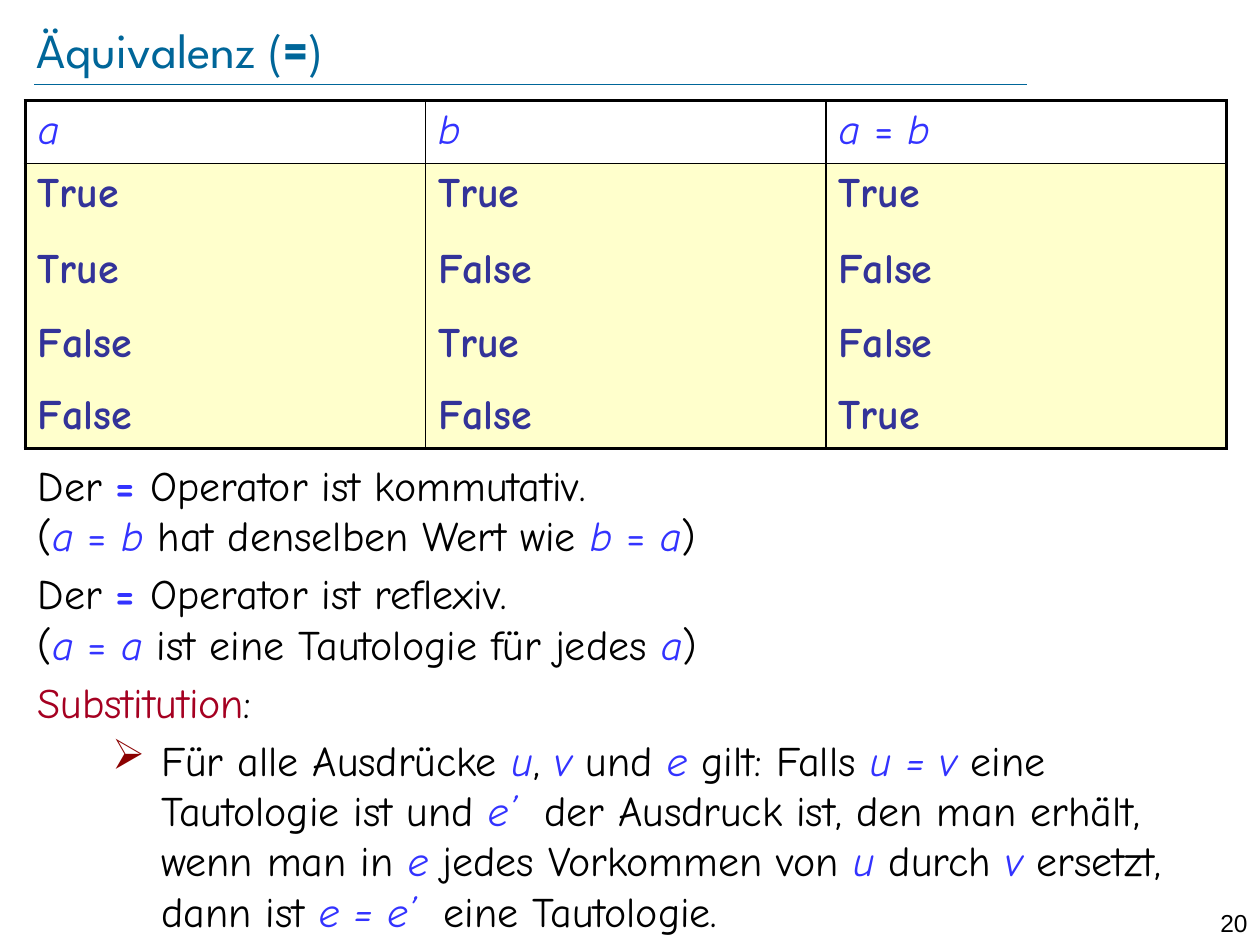
from lxml import etree
from pptx import Presentation
from pptx.dml.color import RGBColor
from pptx.enum.shapes import MSO_CONNECTOR
from pptx.enum.text import MSO_ANCHOR, PP_ALIGN
from pptx.oxml.ns import qn
from pptx.util import Cm, Pt

STRAIGHT = MSO_CONNECTOR.STRAIGHT
MIDDLE = MSO_ANCHOR.MIDDLE
RIGHT = PP_ALIGN.RIGHT

BLACK = RGBColor(0x00, 0x00, 0x00)
TEAL = RGBColor(0x00, 0x66, 0x99)
BLUE = RGBColor(0x33, 0x33, 0xFF)
NAVY = RGBColor(0x33, 0x33, 0x99)
RED = RGBColor(0xA5, 0x00, 0x21)
DARK_RED = RGBColor(0x8B, 0x00, 0x00)
YELLOW = RGBColor(0xFF, 0xFF, 0xCC)

TITLE_FONT, BODY_FONT, NUMBER_FONT = "League Spartan", "Comic Neue", "Arial"

# Run styles: colour, bold, italic
PLAIN = (BLACK, False, False)
VAR = (BLUE, False, True)
SIGN = (BLUE, False, False)
OPERATOR = (BLUE, True, False)
VALUE = (NAVY, True, False)
TERM = (RED, False, False)
HEADING = (TEAL, False, False)
HEADING_BOLD = (TEAL, True, False)


def add_runs(p, runs, font=BODY_FONT, size=24):
    """Add (text, style) pairs to a paragraph; a text of "\\n" is a line break."""
    for text, (color, bold, italic) in runs:
        if text == "\n":
            p.add_line_break()
            continue
        r = p.add_run()
        r.text = text
        r.font.name, r.font.size = font, Pt(size)
        r.font.bold, r.font.italic = bold, italic
        r.font.color.rgb = color


def add_border(cell, side, width):
    """Draw one cell side (L, R, T or B); a width of 0 leaves it open."""
    ln = etree.SubElement(cell._tc.get_or_add_tcPr(), qn("a:ln" + side), w=str(Pt(width)))
    if width:
        fill = etree.SubElement(ln, qn("a:solidFill"))
        etree.SubElement(fill, qn("a:srgbClr"), val=str(BLACK))
    else:
        etree.SubElement(ln, qn("a:noFill"))


prs = Presentation()
prs.slide_width, prs.slide_height = Cm(25.4), Cm(19.05)
s = prs.slides.add_slide(prs.slide_layouts[6])

# Title and rule
rule = s.shapes.add_connector(STRAIGHT, Cm(0.69), Cm(1.7), Cm(20.7), Cm(1.7))
rule.line.color.rgb = TEAL
rule.line.width = Pt(0.25)
etree.SubElement(rule._element.spPr, qn("a:effectLst"))

tf = s.shapes.add_textbox(Cm(0.74), Cm(0.33), Cm(22.76), Cm(1.3)).text_frame
tf.word_wrap = True
tf.vertical_anchor = MIDDLE
tf.margin_left = tf.margin_right = tf.margin_top = tf.margin_bottom = 0
add_runs(tf.paragraphs[0],
         [("Äquivalenz (", HEADING), ("=", HEADING_BOLD), (")", HEADING)],
         TITLE_FONT, 28)

# Truth table
header = [[("a", VAR)], [("b", VAR)], [("a ", VAR), ("=", SIGN), (" b", VAR)]]
truth = [[a, b, a == b] for a in (True, False) for b in (True, False)]
rows = [header] + [[[(str(v), VALUE)] for v in row] for row in truth]
row_heights = [1.17, 1.52, 1.5, 1.45, 1.22]
last_row, last_col = len(rows) - 1, len(header) - 1

table = s.shapes.add_table(len(rows), len(header), Cm(0.51), Cm(2.03),
                           Cm(24.21), Cm(sum(row_heights))).table
table.first_row = table.horz_banding = False
for col in table.columns:
    col.width = Cm(8.07)
for i, (row, height) in enumerate(zip(rows, row_heights)):
    table.rows[i].height = Cm(height)
    for j, runs in enumerate(row):
        cell = table.cell(i, j)
        add_runs(cell.text_frame.paragraphs[0], runs)
        add_border(cell, "L", 2.25 if j == 0 else 1)
        add_border(cell, "R", 2.25 if j == last_col else 1)
        add_border(cell, "T", {0: 2.25, 1: 1}.get(i, 0))
        add_border(cell, "B", {0: 1, last_row: 2.25}.get(i, 0))
        if i == 0:
            cell.fill.background()
        else:
            cell.fill.solid()
            cell.fill.fore_color.rgb = YELLOW

# Laws
laws = [
    [("Der ", PLAIN), ("= ", OPERATOR), ("Operator ist kommutativ.", PLAIN),
     ("\n", PLAIN), ("(", PLAIN), ("a ", VAR), ("= ", SIGN), ("b ", VAR),
     ("hat denselben Wert wie ", PLAIN), ("b ", VAR), ("= ", SIGN), ("a", VAR),
     (")", PLAIN)],
    [("Der ", PLAIN), ("= ", OPERATOR), ("Operator ist reflexiv.", PLAIN),
     ("\n", PLAIN), ("(", PLAIN), ("a ", VAR), ("= ", SIGN), ("a ", VAR),
     ("ist eine Tautologie für jedes ", PLAIN), ("a", VAR), (")", PLAIN)],
    [("Substitution", TERM), (":", PLAIN)],
    [("Für alle Ausdrücke ", PLAIN), ("u", VAR), (", ", PLAIN), ("v ", VAR),
     ("und ", PLAIN), ("e", VAR), (" gilt: Falls ", PLAIN), ("u = v ", VAR),
     ("eine Tautologie ist und ", PLAIN), ("e’ ", VAR),
     (" der Ausdruck ist, den man erhält, wenn man in ", PLAIN), ("e ", VAR),
     ("jedes Vorkommen von ", PLAIN), ("u ", VAR), ("durch ", PLAIN), ("v", VAR),
     (" ersetzt, dann ist ", PLAIN), ("e = e’ ", VAR),
     (" eine Tautologie.", PLAIN)],
]
tf = s.shapes.add_textbox(Cm(0.51), Cm(9.14), Cm(24.21), Cm(6.88)).text_frame
tf.word_wrap = True
for i, runs in enumerate(laws):
    p = tf.add_paragraph() if i else tf.paragraphs[0]
    if i:
        p.space_before = Pt(4.3)
    add_runs(p, runs)

# The substitution rule is the bulleted last paragraph
p.level = 1
pPr = p._p.get_or_add_pPr()
pPr.set("marL", str(Cm(2.49)))
pPr.set("indent", str(Cm(-0.99)))
bullet_color = etree.SubElement(pPr, qn("a:buClr"))
etree.SubElement(bullet_color, qn("a:srgbClr"), val=str(DARK_RED))
etree.SubElement(pPr, qn("a:buChar"), char="➢")

# Slide number
tf = s.shapes.add_textbox(Cm(24), Cm(18.19), Cm(1.4), Cm(0.61)).text_frame
tf.word_wrap = True
p = tf.paragraphs[0]
p.alignment = RIGHT
add_runs(p, [("20", PLAIN)], NUMBER_FONT, 14)

prs.save("out.pptx")
